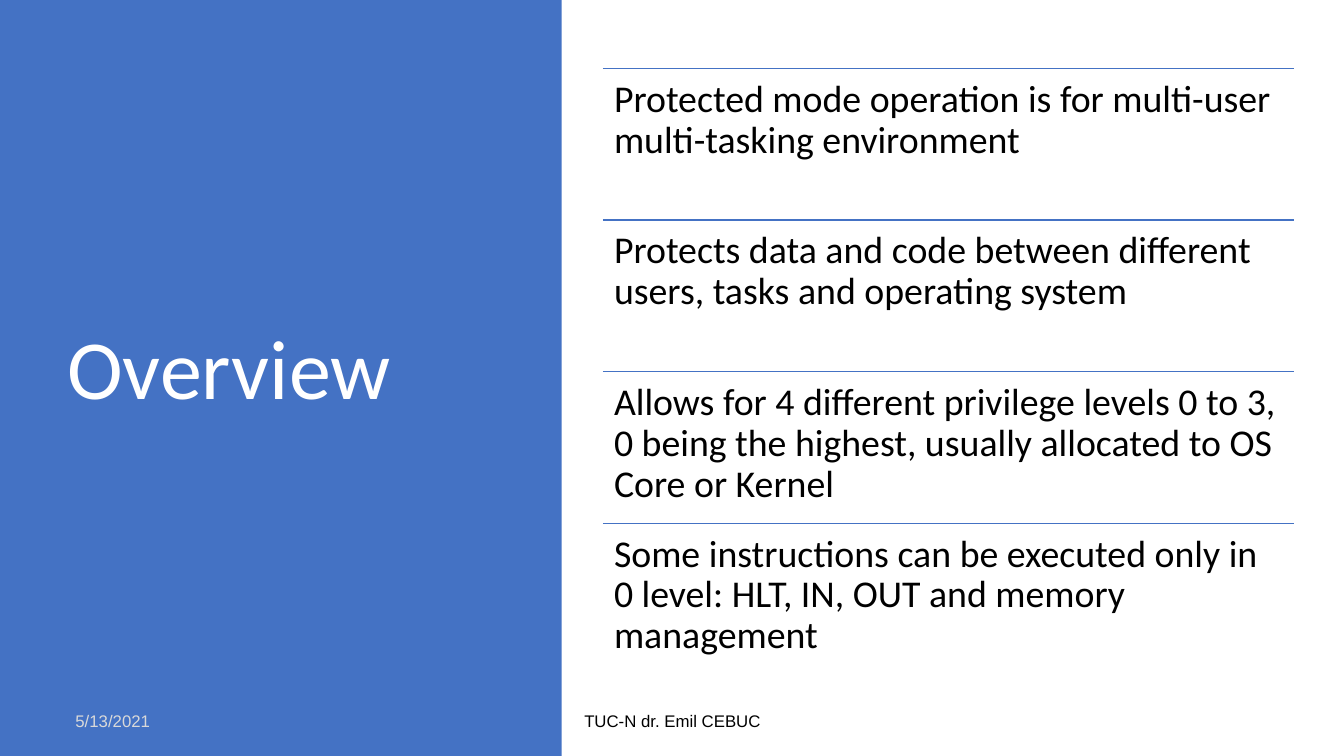
from lxml.etree import SubElement
from pptx import Presentation
from pptx.dml.color import RGBColor
from pptx.enum.shapes import MSO_CONNECTOR, MSO_SHAPE
from pptx.enum.text import MSO_ANCHOR, PP_ALIGN
from pptx.oxml.ns import qn
from pptx.util import Inches, Pt

# Content
TITLE = "Overview"
DATE = "5/13/2021"
FOOTER = "TUC-N dr. Emil CEBUC"
POINTS = [
    "Protected mode operation is for multi-user multi-tasking environment",
    "Protects data and code between different users, tasks and operating system",
    "Allows for 4 different privilege levels 0 to 3, 0 being the highest, "
    "usually allocated to OS Core or Kernel",
    "Some instructions can be executed only in 0 level: HLT, IN, OUT and "
    "memory management",
]

# Colours
BLUE = RGBColor(0x44, 0x72, 0xC4)
WHITE = RGBColor(0xFF, 0xFF, 0xFF)
GREY = RGBColor(0xD9, 0xD9, 0xD9)
BLACK = RGBColor(0, 0, 0)

# Layout of the list, in inches
LEFT, TOP, WIDTH, STEP = 5.98, 0.68, 6.85, 1.5
INSET = 0.11


def add_text(slide, text, box, font, size, color, anchor=MSO_ANCHOR.MIDDLE):
    shape = slide.shapes.add_textbox(*map(Inches, box))
    frame = shape.text_frame
    frame.text = text
    frame.word_wrap = True
    frame.vertical_anchor = anchor
    para = frame.paragraphs[0]
    style = para.runs[0].font
    style.name = font
    style.size = Pt(size)
    style.color.rgb = color
    return frame, para


def add_rule(slide, y):
    line = slide.shapes.add_connector(
        MSO_CONNECTOR.STRAIGHT, Inches(LEFT), Inches(y),
        Inches(LEFT + WIDTH), Inches(y))
    line.line.color.rgb = BLUE
    line.line.width = Pt(1)
    SubElement(line._element.spPr, qn("a:effectLst"))


def main():
    deck = Presentation()
    deck.slide_width, deck.slide_height = Inches(13.33), Inches(7.5)
    slide = deck.slides.add_slide(deck.slide_layouts[6])

    # Title panel
    panel = slide.shapes.add_shape(
        MSO_SHAPE.RECTANGLE, 0, 0, Inches(5.57), deck.slide_height)
    panel.shadow.inherit = False
    panel.fill.solid()
    panel.fill.fore_color.rgb = BLUE
    panel.line.fill.background()
    _, para = add_text(slide, TITLE, (0.57, 0.68, 4.16, 6.02),
                       "Calibri", 60, WHITE)
    para.line_spacing = 0.9

    # Date and footer
    add_text(slide, DATE, (0.65, 6.95, 3, 0.4), "Arial", 12, GREY)
    _, para = add_text(slide, FOOTER, (4.42, 6.95, 4.5, 0.4),
                       "Arial", 12, BLACK)
    para.alignment = PP_ALIGN.CENTER

    # Ruled list of points
    for i, point in enumerate(POINTS):
        y = TOP + i * (STEP + 0.004)
        add_rule(slide, y)
        frame, para = add_text(slide, point, (LEFT, y, WIDTH, STEP),
                               "Calibri", 27, BLACK, MSO_ANCHOR.TOP)
        frame.margin_left = frame.margin_right = Inches(INSET)
        frame.margin_top = frame.margin_bottom = Inches(INSET)
        para.line_spacing = 0.9

    deck.save("out.pptx")


if __name__ == "__main__":
    main()
